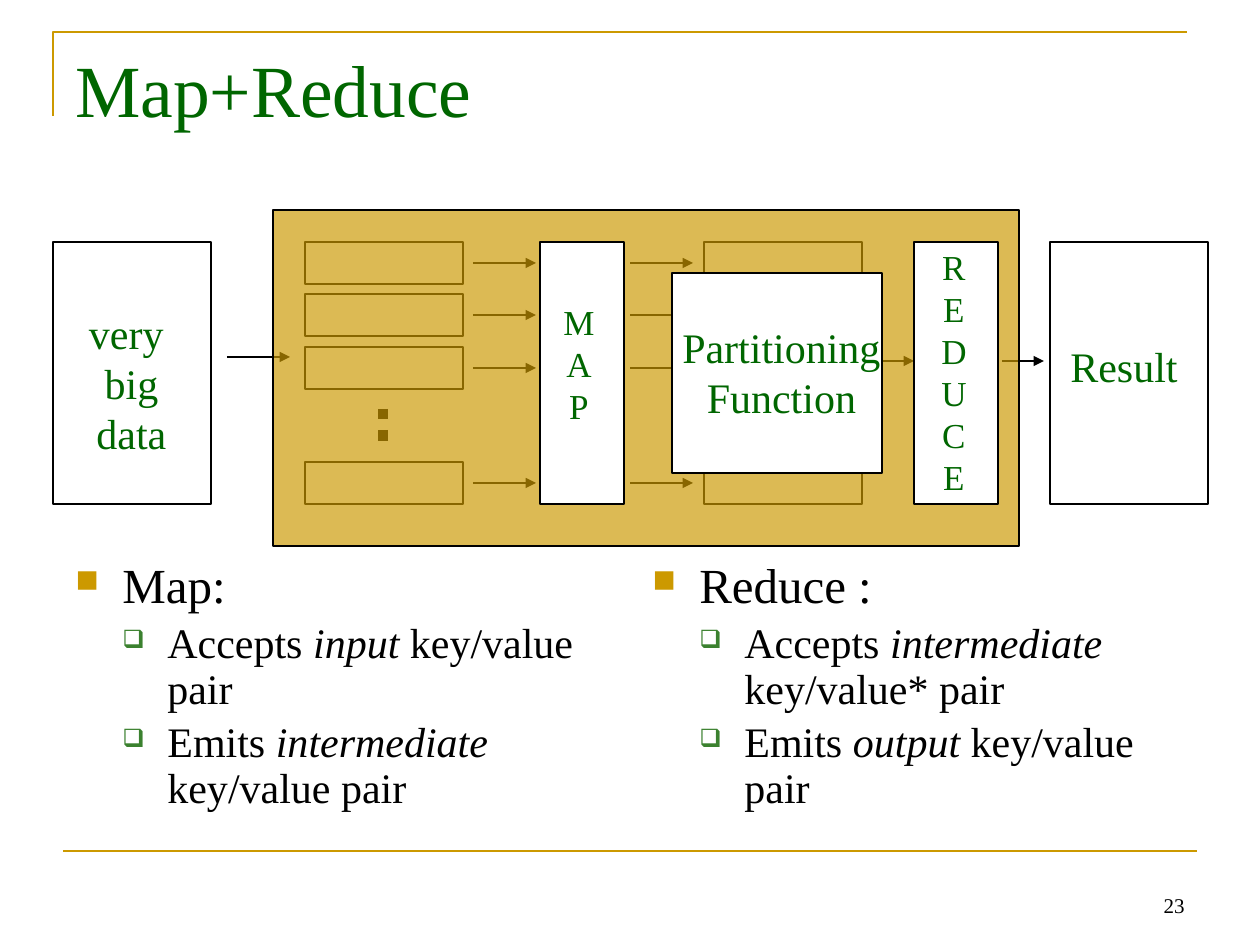
from lxml import etree
from pptx import Presentation
from pptx.dml.color import RGBColor
from pptx.enum.dml import MSO_LINE
from pptx.enum.shapes import MSO_CONNECTOR, MSO_SHAPE
from pptx.enum.text import MSO_ANCHOR, PP_ALIGN
from pptx.oxml.ns import qn
from pptx.util import Pt

PX = 914400 / 126
FONT = "Times New Roman"
COLORS = {
    "gold": "CC9900",
    "title": "006600",
    "check": "3B812F",
    "ink": "000000",
    "paper": "FFFFFF",
}
RGB = {name: RGBColor.from_string(value) for name, value in COLORS.items()}

prs = Presentation()
prs.slide_width, prs.slide_height = round(1260 * PX), round(945 * PX)
slide = prs.slides.add_slide(prs.slide_layouts[6])
shapes = slide.shapes


def draw_box(*bounds, fill="paper"):
    box = shapes.add_shape(MSO_SHAPE.RECTANGLE, *(round(v * PX) for v in bounds))
    box.shadow.inherit = False
    box.fill.solid()
    box.fill.fore_color.rgb = RGB[fill]
    box.line.color.rgb = RGB["ink"]
    box.line.width = Pt(0.75)
    return box


def draw_line(*ends, color="ink", width=1, arrow=True):
    line = shapes.add_connector(MSO_CONNECTOR.STRAIGHT, *(round(v * PX) for v in ends))
    line.line.color.rgb = RGB[color]
    line.line.width = Pt(width)
    if arrow:
        etree.SubElement(line.line._get_or_add_ln(), qn("a:tailEnd"), type="triangle")
    etree.SubElement(line._element.spPr, qn("a:effectLst"))
    return line


# Gold frame
corner = shapes.build_freeform(53, 116, scale=PX)
corner.add_line_segments([(53, 32), (1187, 32)], close=False)
corner_line = corner.convert_to_shape()
corner_line.shadow.inherit = False
corner_line.fill.background()
corner_line.line.color.rgb = RGB["gold"]
corner_line.line.width = Pt(1.5)
draw_line(63, 851, 1197, 851, color="gold", width=1.5, arrow=False)

# Data, splits and result, with the arrows between them
STAGE_TOP, STAGE_HEIGHT = 242, 262
SPLIT_TOPS = (242, 294, 347, 462)
SPLIT_WIDTH, SPLIT_HEIGHT = 158, 42

for left in (53, 1050):
    draw_box(left, STAGE_TOP, SPLIT_WIDTH, STAGE_HEIGHT)
for top in SPLIT_TOPS:
    draw_box(305, top, SPLIT_WIDTH, SPLIT_HEIGHT)
for top in (SPLIT_TOPS[0], SPLIT_TOPS[-1]):
    draw_box(704, top, SPLIT_WIDTH, SPLIT_HEIGHT)

more_splits = draw_line(383, 409, 383, 441, width=6, arrow=False)
more_splits.line.dash_style = MSO_LINE.ROUND_DOT

draw_line(227, 357, 290, 357)
for left in (473, 630):
    for top in SPLIT_TOPS:
        middle = top + SPLIT_HEIGHT // 2
        draw_line(left, middle, left + 63, middle)
for left in (872, 1002):
    draw_line(left, 361, left + 42, 361)

# Translucent engine area, with the function boxes in front
engine = draw_box(273, 210, 746, 336, fill="gold")
engine_color = engine.fill._xPr.find(qn("a:solidFill"))[0]
etree.SubElement(engine_color, qn("a:alpha"), val="67000")
for left in (540, 914):
    draw_box(left, STAGE_TOP, 84, STAGE_HEIGHT)
draw_box(672, 273, 210, 200)

# Title, stage labels and page number
CENTER = PP_ALIGN.CENTER
labels = [
    (["Map+Reduce"], (63, 38, 1134, 157), 42, "title", PP_ALIGN.LEFT, MSO_ANCHOR.TOP),
    (["very ", "big", "data"], (76, 301, 111, 165), 24, "title", CENTER, MSO_ANCHOR.TOP),
    (["Result"], (1057, 334, 134, 63), 24, "title", CENTER, MSO_ANCHOR.TOP),
    (list("MAP"), (551, 294, 56, 140), 20, "title", CENTER, MSO_ANCHOR.TOP),
    (list("REDUCE"), (928, 239, 52, 267), 20, "title", CENTER, MSO_ANCHOR.TOP),
    (["Partitioning", "Function"], (669, 315, 225, 115), 24, "title", CENTER, MSO_ANCHOR.TOP),
    (["23"], (903, 861, 294, 63), 12, "ink", PP_ALIGN.RIGHT, MSO_ANCHOR.BOTTOM),
]
for lines, bounds, size, color, align, anchor in labels:
    frame = shapes.add_textbox(*(round(v * PX) for v in bounds)).text_frame
    frame.word_wrap = align != CENTER
    frame.vertical_anchor = anchor
    for index, line in enumerate(lines):
        paragraph = frame.paragraphs[0] if index == 0 else frame.add_paragraph()
        paragraph.text = line
        paragraph.alignment = align
        paragraph.font.name = FONT
        paragraph.font.size = Pt(size)
        paragraph.font.color.rgb = RGB[color]

# Explanations: each point is plain, italic, plain
explanations = [
    (63, "Map:", [("Accepts ", "input", " key/value pair"),
                  ("Emits ", "intermediate", " key/value pair")]),
    (640, "Reduce :", [("Accepts ", "intermediate", " key/value* pair"),
                       ("Emits ", "output", " key/value pair")]),
]
# size, left margin, hanging indent, bullet, bullet colour, bullet percent
LEVELS = [
    (28, 47, 47, "■", "gold", 65),
    (24, 92, 45, "❑", "check", 60),
]
for left, heading, points in explanations:
    bounds = (left, 555, 556, 305)
    frame = shapes.add_textbox(*(round(v * PX) for v in bounds)).text_frame
    frame.word_wrap = True
    for index, parts in enumerate([(heading,), *points]):
        paragraph = frame.paragraphs[0] if index == 0 else frame.add_paragraph()
        paragraph.level = min(index, 1)
        size, margin, hang, bullet, bullet_color, percent = LEVELS[paragraph.level]
        paragraph.line_spacing = 0.9
        paragraph.space_before = Pt(size * 0.2 if index else 0)
        paragraph.font.name = FONT
        paragraph.font.size = Pt(size)
        paragraph.font.color.rgb = RGB["ink"]
        for position, part in enumerate(parts):
            run = paragraph.add_run()
            run.text = part
            if position == 1:
                run.font.italic = True

        properties = paragraph._p.get_or_add_pPr()
        properties.set("marL", str(round(margin * PX)))
        properties.set("indent", str(round(-hang * PX)))
        bullet_nodes = [etree.Element(qn("a:buClr")),
                        etree.Element(qn("a:buSzPct"), val=str(percent * 1000)),
                        etree.Element(qn("a:buChar"), char=bullet)]
        etree.SubElement(bullet_nodes[0], qn("a:srgbClr"), val=COLORS[bullet_color])
        for node in bullet_nodes:
            properties.find(qn("a:defRPr")).addprevious(node)

prs.save("out.pptx")
